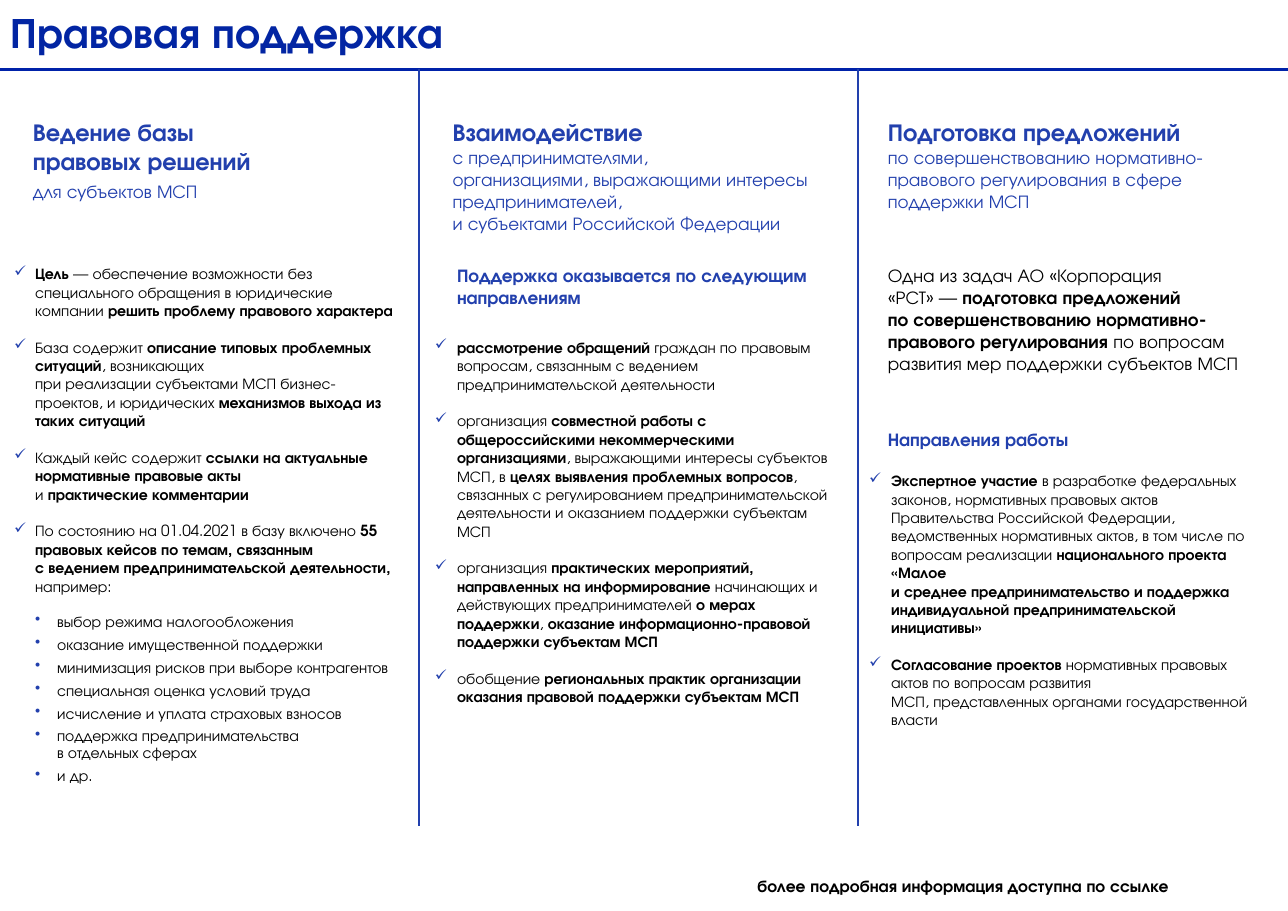
from dataclasses import dataclass

from lxml import etree
from pptx import Presentation
from pptx import util as u
from pptx.dml.color import RGBColor
from pptx.enum import shapes, text
from pptx.oxml.ns import qn


@dataclass(frozen=True)
class Theme:
    font: str = "TeX Gyre Adventor"
    title_blue: str = "0225A3"
    rule_blue: str = "0022A9"
    blue: str = "2240AD"
    black: str = "000000"
    title: int = 28
    heading: int = 16
    lead: int = 12
    note: int = 11
    body: int = 10
    line: float = 1.5


class Page:
    """One slide; all lengths are percent of its width or height."""

    def __init__(self, deck, theme):
        self.theme = theme
        self.width, self.height = deck.slide_width, deck.slide_height
        self.slide = deck.slides.add_slide(deck.slide_layouts[6])

    def place(self, x, y):
        return round(self.width * x / 100), round(self.height * y / 100)

    def box(self, x, y, width, height, wrap=True, middle=False):
        shape = self.slide.shapes.add_textbox(*self.place(x, y), *self.place(width, height))
        frame = shape.text_frame
        frame.word_wrap = wrap
        if middle:
            frame.vertical_anchor = text.MSO_ANCHOR.MIDDLE
        else:
            frame.auto_size = text.MSO_AUTO_SIZE.SHAPE_TO_FIT_TEXT
        return frame

    def para(self, frame, words, size, color, bold=False, mark=None, indent=(0, 0),
             before=0, after=0, spacing=None, align=None, lead_size=None):
        """Words between ** are bold; with lead_size, they are larger too."""
        first = frame.paragraphs[0]
        para = frame.add_paragraph() if first.runs else first
        if mark:
            self.bullet(para, mark, *indent)
        para.space_before, para.space_after = u.Pt(before), u.Pt(after)
        if spacing:
            para.line_spacing = spacing
        if align:
            para.alignment = align
        font = para.font
        font.name, font.size, font.bold = self.theme.font, u.Pt(size), bold
        font.color.rgb = RGBColor.from_string(color)
        for part, piece in enumerate(words.split("**")):
            for row, line in enumerate(piece.split("\n")):
                if row:
                    para.add_line_break()
                if not line:
                    continue
                span = para.add_run()
                span.text = line
                if part % 2:
                    span.font.bold = True
                    if lead_size:
                        span.font.size = u.Pt(lead_size)

    def bullet(self, para, mark, left, hanging):
        props = para._p.get_or_add_pPr()
        props.set("marL", str(u.Inches(left)))
        props.set("indent", str(-u.Inches(hanging)))
        color = etree.SubElement(props, qn("a:buClr"))
        etree.SubElement(color, qn("a:srgbClr")).set("val", self.theme.blue)
        etree.SubElement(props, qn("a:buChar")).set("char", mark)

    def heading(self, area, words):
        self.para(self.box(*area), words, self.theme.lead, self.theme.blue,
                  lead_size=self.theme.heading)

    def subheading(self, area, words, after, wrap=True):
        self.para(self.box(*area, wrap=wrap), words, self.theme.lead, self.theme.blue,
                  bold=True, after=after)

    def checklist(self, area, items, indent=(0.29, 0.2)):
        frame = self.box(*area)
        for item in items:
            self.para(frame, item, self.theme.body, self.theme.black,
                      mark="✓", indent=indent, after=12)
        return frame

    def rule(self, start, end, color):
        line = self.slide.shapes.add_connector(
            shapes.MSO_CONNECTOR.STRAIGHT, *self.place(*start), *self.place(*end))
        line.line.color.rgb = RGBColor.from_string(color)
        line.line.width = u.Pt(self.theme.line)
        etree.SubElement(line._element.spPr, qn("a:effectLst"))


HEAD_ROW, BODY_ROW, RULE_ROW, FOOT_ROW = 12.21, 28.42, 7.62, 90.69
DIVIDERS = (32.51, 66.64)
THIRD = 68.09

BASE_ITEMS = (
    "**Цель** — обеспечение возможности без специального обращения в юридические "
    "компании **решить проблему правового характера**",
    "База содержит **описание типовых проблемных ситуаций**, возникающих \n"
    "при реализации субъектами МСП бизнес-проектов, и юридических "
    "**механизмов выхода из таких ситуаций**",
    "Каждый кейс содержит **ссылки на актуальные нормативные правовые акты \n**"
    "и **практические комментарии**",
    "По состоянию на 01.04.2021 в базу включено **55 правовых кейсов по темам, связанным \n"
    "с ведением предпринимательской деятельности, **например:",
)
CASE_TOPICS = (
    "выбор режима налогообложения",
    "оказание имущественной поддержки",
    "минимизация рисков при выборе контрагентов",
    "специальная оценка условий труда",
    "исчисление и уплата страховых взносов",
    "поддержка предпринимательства \nв отдельных сферах",
    "и др.",
)
SUPPORT_ITEMS = (
    "**рассмотрение обращений **граждан по правовым вопросам, связанным с ведением "
    "предпринимательской деятельности",
    "организация **совместной работы с общероссийскими некоммерческими организациями**, "
    "выражающими интересы субъектов МСП, в **целях выявления проблемных вопросов**, "
    "связанных с регулированием предпринимательской деятельности и оказанием поддержки "
    "субъектам МСП",
    "организация **практических мероприятий, направленных на информирование **начинающих "
    "и действующих предпринимателей **о мерах поддержки**, "
    "**оказание информационно-правовой поддержки субъектам МСП**",
    "обобщение **региональных практик организации оказания правовой поддержки субъектам МСП**",
)
WORK_ITEMS = (
    "**Экспертное участие **в разработке федеральных законов, нормативных правовых актов "
    "Правительства Российской Федерации, ведомственных нормативных актов, в том числе по "
    "вопросам реализации **национального проекта «Малое \nи среднее предпринимательство и "
    "поддержка индивидуальной предпринимательской инициативы»**",
    "**Согласование проектов **нормативных правовых актов по вопросам развития \n"
    "МСП, представленных органами государственной власти",
)


def main():
    theme = Theme()
    deck = Presentation()
    deck.slide_width, deck.slide_height = u.Inches(11.69), u.Inches(8.27)
    page = Page(deck, theme)

    # Title, footer and rules
    page.para(page.box(0, 0.36, 96.84, 6.89, middle=True), "Правовая поддержка",
              theme.title, theme.title_blue, bold=True, spacing=0.9)
    page.para(page.box(48.59, 94.56, 43.03, 5.44, middle=True),
              "более подробная информация доступна по ссылке",
              theme.note, theme.black, bold=True, align=text.PP_ALIGN.RIGHT)
    page.rule((0, RULE_ROW), (100, RULE_ROW), theme.rule_blue)
    for x in DIVIDERS:
        page.rule((x, RULE_ROW), (x, FOOT_ROW), theme.blue)

    # First column: base of legal solutions
    frame = page.box(1.71, HEAD_ROW, 21.21, 10.64)
    page.para(frame, "Ведение базы правовых решений", theme.heading, theme.blue, bold=True)
    page.para(frame, "для субъектов МСП", theme.lead, theme.blue, before=3)
    frame = page.checklist((0.26, BODY_ROW, 31.31, 62.76), BASE_ITEMS, indent=(0.19, 0.19))
    for topic in CASE_TOPICS:
        page.para(frame, topic, theme.body, theme.black, mark="•", indent=(0.39, 0.2),
                  after=4, spacing=u.Pt(11))

    # Second column: cooperation
    page.heading((34.3, HEAD_ROW, 31.14, 14.27),
                 "**Взаимодействие**\nс предпринимателями,\nорганизациями, выражающими "
                 "интересы предпринимателей, \nи субъектами Российской Федерации")
    page.subheading((34.64, BODY_ROW, 32.34, 6.05),
                    "Поддержка оказывается по следующим направлениям", after=6)
    page.checklist((32.16, 36.52, 33.36, 45.95), SUPPORT_ITEMS)

    # Third column: proposals
    page.heading((THIRD, HEAD_ROW, 29.43, 11.85),
                 "**Подготовка предложений**\nпо совершенствованию нормативно-правового "
                 "регулирования в сфере поддержки МСП")
    page.para(page.box(THIRD, BODY_ROW, 31.91, 13.42),
              "Одна из задач АО «Корпорация\n«РСТ» — **подготовка предложений \n"
              "по совершенствованию нормативно-правового регулирования **"
              "по вопросам развития мер поддержки субъектов МСП",
              theme.lead, theme.black, after=6)
    page.subheading((THIRD, 46.43, 17.79, 3.63), "Направления работы", after=3, wrap=False)
    page.checklist((65.87, 51.15, 33.02, 29.75), WORK_ITEMS)

    deck.save("out.pptx")


if __name__ == "__main__":
    main()
